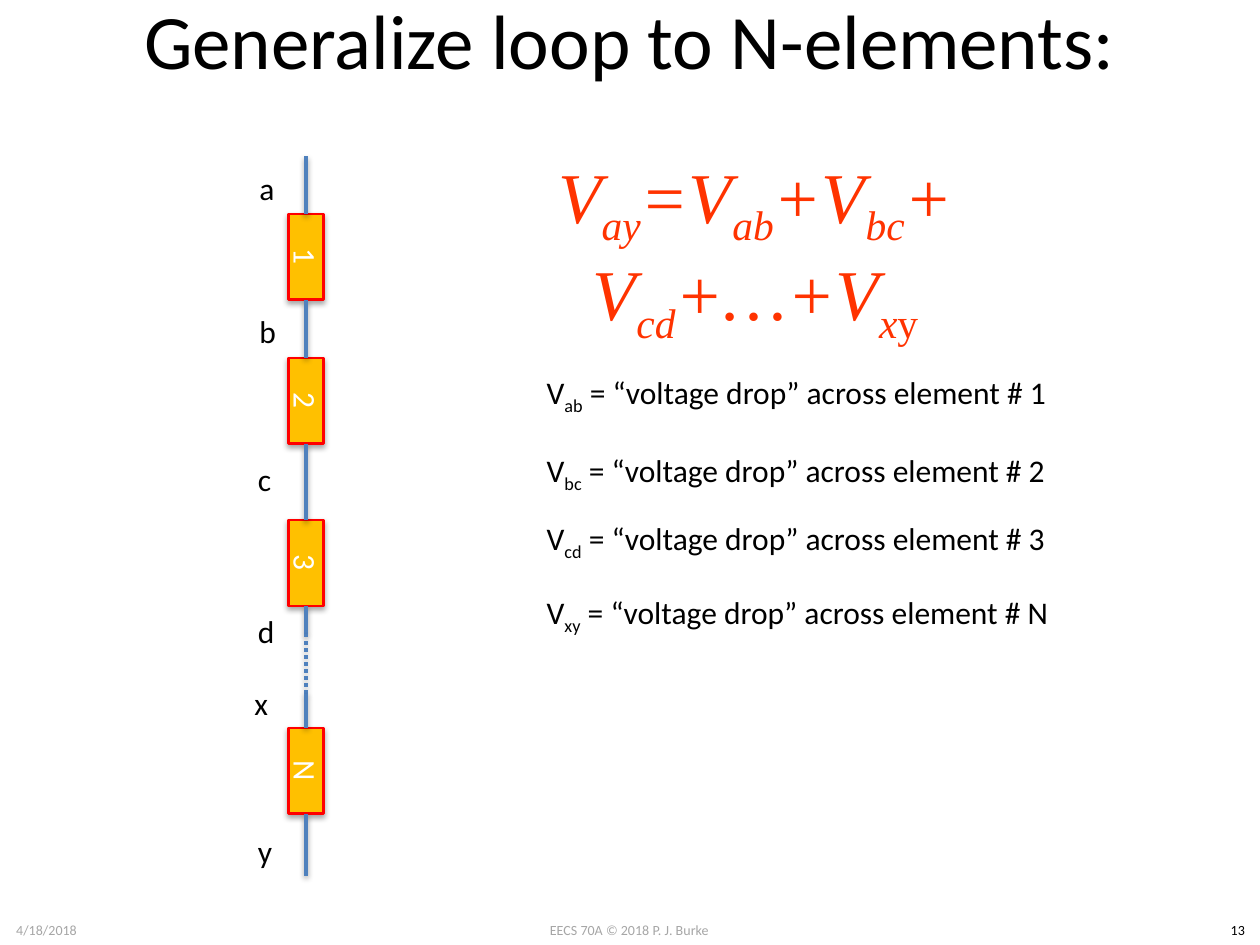
from lxml import etree
from pptx import Presentation
from pptx.dml.color import RGBColor
from pptx.enum.dml import MSO_LINE
from pptx.enum.shapes import MSO_CONNECTOR, MSO_SHAPE
from pptx.enum.text import MSO_ANCHOR, PP_ALIGN
from pptx.oxml.ns import qn
from pptx.util import Cm, Pt

LEFT, CENTER = PP_ALIGN.LEFT, PP_ALIGN.CENTER
TOP, MIDDLE = MSO_ANCHOR.TOP, MSO_ANCHOR.MIDDLE
STRAIGHT, RECTANGLE = MSO_CONNECTOR.STRAIGHT, MSO_SHAPE.RECTANGLE
DOTTED = MSO_LINE.ROUND_DOT

BLACK, WHITE, GRAY = "000000", "FFFFFF", "A6A6A6"
AMBER, RED, BLUE, ORANGE = "FFC000", "FF0000", "4F81BD", "FF3300"
SANS, SERIF = "Calibri", "Times New Roman"

# Site numbers of a rectangle turned by 90 degrees
UPPER_SITE, LOWER_SITE = 1, 3
ELEMENT_LENGTH, ELEMENT_BREADTH = 1.73, 0.71


def color(hex_code):
    return RGBColor.from_string(hex_code)


def add_shadow(item, alpha, distance):
    effects = etree.SubElement(item._element.spPr, qn("a:effectLst"))
    shadow = etree.SubElement(effects, qn("a:outerShdw"), blurRad="40000",
                              dist=str(distance), dir="5400000", rotWithShape="0")
    shade = etree.SubElement(shadow, qn("a:srgbClr"), val=BLACK)
    etree.SubElement(shade, qn("a:alpha"), val=str(alpha * 1000))


def add_span(para, text, size, hex_code, name=SANS, italic=False, subscript=False):
    span = para.add_run()
    span.text = text
    span.font.size = Pt(size)
    span.font.name = name
    span.font.italic = italic
    span.font.color.rgb = color(hex_code)
    if subscript:
        span._r.get_or_add_rPr().set("baseline", "-25000")


def add_text_box(page, left, top, width, height, align=LEFT, anchor=TOP, wrap=True):
    """Add an empty text box and return its paragraph."""
    box = page.shapes.add_textbox(Cm(left), Cm(top), Cm(width), Cm(height))
    frame = box.text_frame
    frame.word_wrap = wrap
    frame.vertical_anchor = anchor
    para = frame.paragraphs[0]
    para.alignment = align
    return para


def add_title(page, left, top, width, height):
    para = add_text_box(page, left, top, width, height, CENTER, MIDDLE)
    add_span(para, "Generalize loop to N-elements:", 44, BLACK)


def add_element(page, name, center_x, center_y):
    box = page.shapes.add_shape(
        RECTANGLE, Cm(center_x - ELEMENT_LENGTH / 2), Cm(center_y - ELEMENT_BREADTH / 2),
        Cm(ELEMENT_LENGTH), Cm(ELEMENT_BREADTH))
    box.rotation = 90
    box.fill.solid()
    box.fill.fore_color.rgb = color(AMBER)
    box.line.color.rgb = color(RED)
    box.line.width = Pt(1.5)
    add_shadow(box, 35, 23000)
    box.text_frame.vertical_anchor = MIDDLE
    para = box.text_frame.paragraphs[0]
    para.alignment = CENTER
    add_span(para, name, 18, WHITE)
    return box


def add_wire(page, x, start, end, above=None, below=None, dash=None):
    """Draw a vertical wire, joined to the elements above and below it."""
    wire = page.shapes.add_connector(STRAIGHT, Cm(x), Cm(start), Cm(x), Cm(end))
    if above is not None:
        wire.begin_connect(above, LOWER_SITE)
    if below is not None:
        wire.end_connect(below, UPPER_SITE)
    # Joining ignores rotation, so the ends are set again
    wire.begin_x, wire.begin_y = Cm(x), Cm(start)
    wire.end_x, wire.end_y = Cm(x), Cm(end)
    wire.line.color.rgb = color(BLUE)
    wire.line.width = Pt(2)
    if dash is not None:
        wire.line.dash_style = dash
    add_shadow(wire, 38, 20000)


def add_circuit(page, left, top, height):
    x = left + 1.29
    centers = {"1": 2.03, "2": 4.93, "3": 8.2, "N": 12.39}
    gap_start, gap_end = top + 9.63, top + 10.85
    half = ELEMENT_LENGTH / 2

    boxes = {name: add_element(page, name, x, top + offset)
             for name, offset in centers.items()}
    upper = {name: top + offset - half for name, offset in centers.items()}
    lower = {name: top + offset + half for name, offset in centers.items()}

    add_wire(page, x, top, upper["1"], below=boxes["1"])
    for first, second in (("1", "2"), ("2", "3")):
        add_wire(page, x, lower[first], upper[second], boxes[first], boxes[second])
    add_wire(page, x, lower["3"], gap_start, above=boxes["3"])
    add_wire(page, x, gap_start, gap_end, dash=DOTTED)
    add_wire(page, x, gap_end, upper["N"], below=boxes["N"])
    add_wire(page, x, lower["N"], top + height, above=boxes["N"])

    nodes = (("a", 0.1, 0.13), ("b", 0.1, 3.02), ("c", 0.07, 5.99),
             ("d", 0.07, 9.07), ("x", 0, 10.52), ("y", 0.07, 13.49))
    for name, shift, offset in nodes:
        para = add_text_box(page, left + shift, top + offset, 0.82, 1.02, wrap=False)
        add_span(para, name, 18, BLACK)


def add_formula(page, left, top, width, height):
    para = add_text_box(page, left, top, width, height, CENTER, MIDDLE)
    terms = (("V", "ay"), ("=V", "ab"), ("+V", "bc"), ("+V", "cd"), ("+…+V", "x"))
    for symbol, index in terms:
        add_span(para, symbol, 40.8, ORANGE, SERIF, italic=True)
        add_span(para, index, 40.8, ORANGE, SERIF, italic=True, subscript=True)
    add_span(para, "y", 40.8, ORANGE, SERIF, subscript=True)


def add_definitions(page, left, top, width):
    rows = (("ab", "1", 0), ("bc", "2", 1.57), ("cd", "3", 2.95), ("xy", "N", 4.45))
    for index, element, offset in rows:
        para = add_text_box(page, left, top + offset, width, 1.02)
        add_span(para, "V", 18, BLACK)
        add_span(para, index, 18, BLACK, subscript=True)
        add_span(para, f" = “voltage drop” across element # {element}", 18, BLACK)


def add_footer(page, top, height):
    parts = ((0, 1.88, "4/18/2018", GRAY),
             (9.73, 5.92, "EECS 70A © 2018 P. J. Burke", GRAY),
             (24.51, 0.89, "13", BLACK))
    for left, width, text, hex_code in parts:
        para = add_text_box(page, left, top, width, height, CENTER, wrap=False)
        add_span(para, text, 8, hex_code)


def main():
    deck = Presentation()
    deck.slide_width, deck.slide_height = Cm(25.4), Cm(19.05)
    page = deck.slides.add_slide(deck.slide_layouts[6])
    add_footer(page, 18.45, 0.6)
    add_title(page, 1.27, -0.81, 22.86, 3.18)
    add_circuit(page, 4.88, 3.15, 14.5)
    add_formula(page, 10.8, 2.97, 8.86, 4.11)
    add_definitions(page, 10.77, 7.39, 11.12)
    deck.save("out.pptx")


if __name__ == "__main__":
    main()
